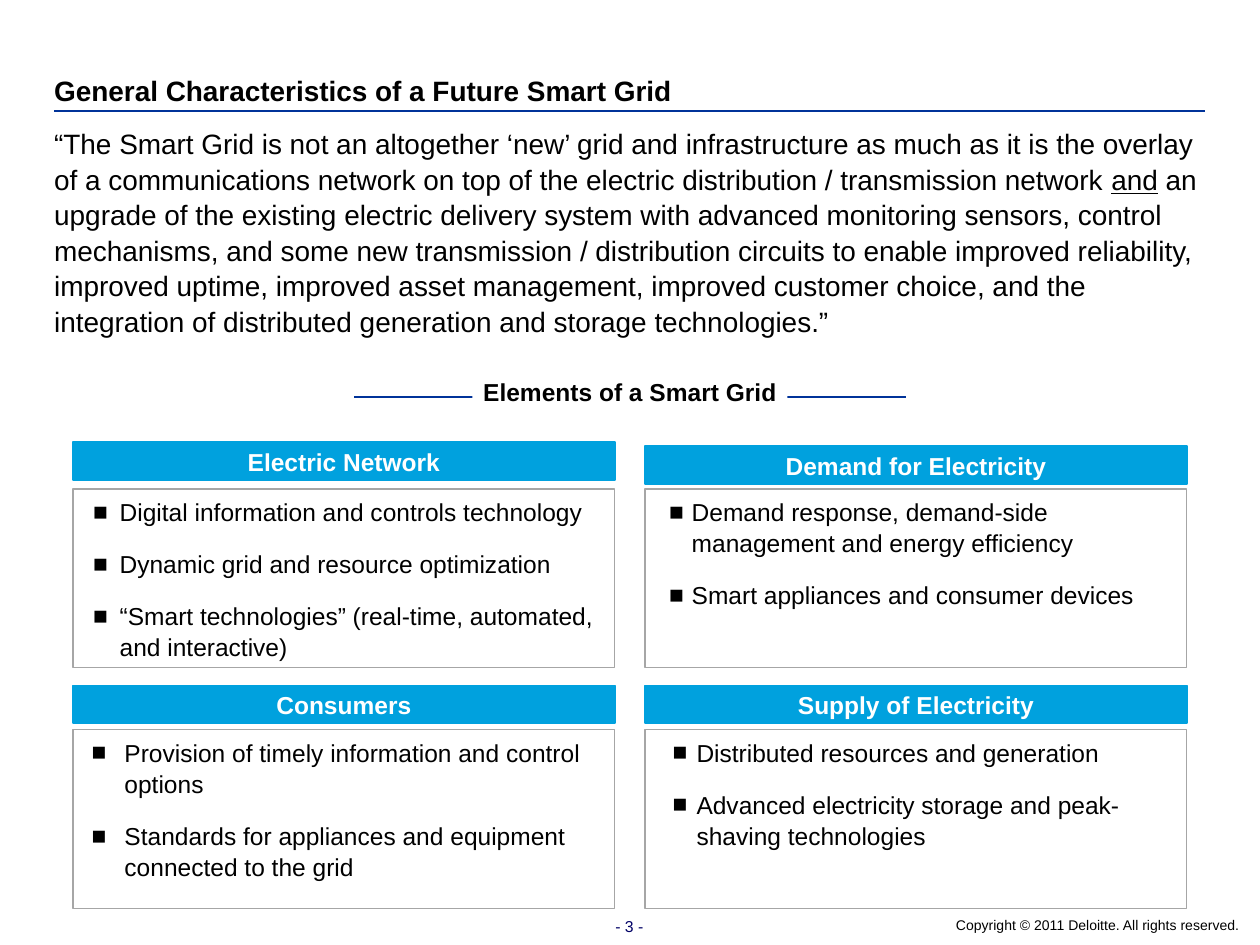
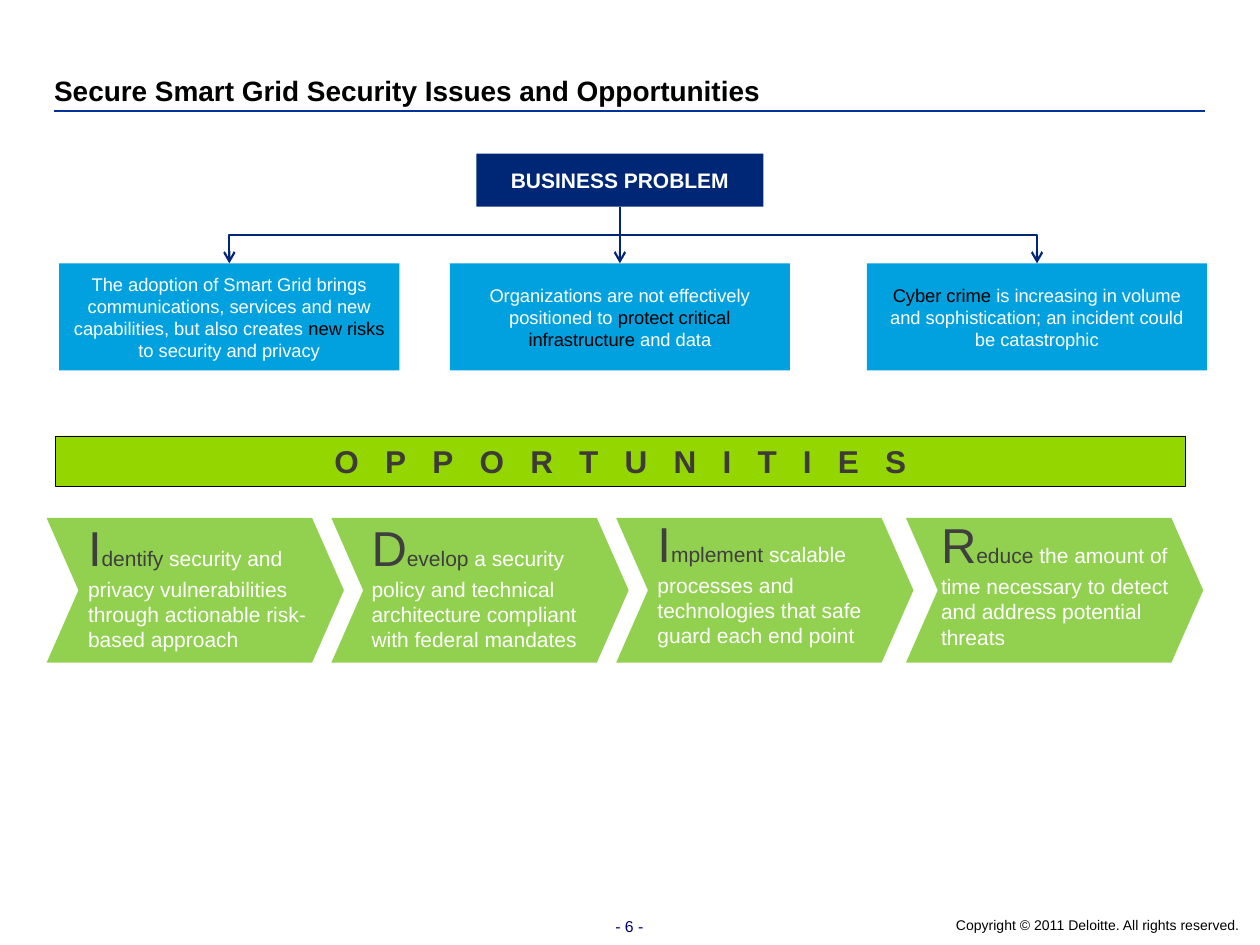
import pptx
import pptx.dml.color
import pptx.enum.dml
import pptx.enum.shapes
import pptx.enum.text
import pptx.oxml.ns
import pptx.util
import lxml.etree

Inches = pptx.util.Inches
Pt = pptx.util.Pt
SHAPE = pptx.enum.shapes.MSO_SHAPE
CONNECTOR = pptx.enum.shapes.MSO_CONNECTOR
ALIGN = pptx.enum.text.PP_ALIGN
ANCHOR = pptx.enum.text.MSO_ANCHOR
qn = pptx.oxml.ns.qn


class Theme:
    font = "Arial"
    black = "000000"
    white = "FFFFFF"
    rule = "003399"
    page = "000066"
    border = "A6A6A6"
    sky = "00A1DE"
    navy = "002776"
    lime = "94D600"
    leaf = "92D050"
    charcoal = "3F3F3F"
    banner_text = "3E3A38"
    heading_size = 16
    label_size = 14
    body_size = 12
    note_size = 10.5
    banner_size = 18
    initial_size = 28
    page_size = 9
    copyright_size = 8
    line_spacing = 1.06


def write_text(shape, paragraphs, size=Theme.body_size, color=Theme.black, bold=False,
               align=ALIGN.LEFT, anchor=ANCHOR.TOP, insets=(0.1, 0.05, 0.1, 0.05),
               spacing=1.0, gap=0, indent=None, bullet=None, tracking=None,
               fill=None, line=None, line_width=0.75, wrap=True):
    shape.shadow.inherit = False
    if fill:
        shape.fill.solid()
        shape.fill.fore_color.rgb = pptx.dml.color.RGBColor.from_string(fill)
    else:
        shape.fill.background()
    if line:
        shape.line.color.rgb = pptx.dml.color.RGBColor.from_string(line)
        shape.line.width = Pt(line_width)
    else:
        shape.line.fill.background()
    frame = shape.text_frame
    frame.auto_size = pptx.enum.text.MSO_AUTO_SIZE.NONE
    frame.word_wrap = wrap
    frame.vertical_anchor = anchor
    (frame.margin_left, frame.margin_top,
     frame.margin_right, frame.margin_bottom) = map(Inches, insets)
    for index, runs in enumerate(paragraphs):
        paragraph = frame.add_paragraph() if index else frame.paragraphs[0]
        if indent:
            properties = paragraph._p.get_or_add_pPr()
            properties.set("marL", str(Inches(indent[0])))
            properties.set("indent", str(Inches(indent[1])))
            if bullet:
                bullet_color = lxml.etree.SubElement(properties, qn("a:buClr"))
                lxml.etree.SubElement(bullet_color, qn("a:srgbClr"), val=Theme.black)
                lxml.etree.SubElement(properties, qn("a:buFont"), typeface=Theme.font)
                lxml.etree.SubElement(properties, qn("a:buChar"), char=bullet)
            else:
                lxml.etree.SubElement(properties, qn("a:buNone"))
        paragraph.alignment = align
        paragraph.line_spacing = spacing
        paragraph.space_before = Pt(gap if index else 0)
        for text, changes in [(runs, {})] if isinstance(runs, str) else runs:
            for number, piece in enumerate(text.split("\n")):
                if number:
                    paragraph.add_line_break()
                run = paragraph.add_run()
                run.text = piece
                run.font.name = Theme.font
                run.font.size = Pt(changes.get("size", size))
                run.font.bold = bold
                run.font.underline = changes.get("underline", False)
                run.font.color.rgb = pptx.dml.color.RGBColor.from_string(
                    changes.get("color", color))
                if tracking:
                    run._r.get_or_add_rPr().set("spc", str(tracking * 100))


def draw_line(slide, kind, start, end, color, width, arrow=False):
    connector = slide.shapes.add_connector(kind, *map(Inches, start + end))
    connector.line.color.rgb = pptx.dml.color.RGBColor.from_string(color)
    connector.line.width = Pt(width)
    properties = connector.element.spPr
    if arrow:
        lxml.etree.SubElement(properties.find(qn("a:ln")), qn("a:tailEnd"), type="arrow")
    lxml.etree.SubElement(properties, qn("a:effectLst"))
    return connector


presentation = pptx.Presentation()
presentation.slide_width = Inches(10)
presentation.slide_height = Inches(7.5)

slides = []
for layout_name, number, title in [
    ("Title and Content", 3, "General Characteristics of a Future Smart Grid"),
    ("Title Only", 6, "Secure Smart Grid Security Issues and Opportunities"),
]:
    slide = presentation.slides.add_slide(
        presentation.slide_layouts.get_by_name(layout_name))
    slides.append(slide)
    heading = slide.shapes.title
    heading.left, heading.top, heading.width, heading.height = map(
        Inches, (0.43, 0.57, 9.13, 0.28))
    write_text(heading, [title], size=Theme.heading_size, bold=True, anchor=ANCHOR.BOTTOM,
               insets=(0, 0, 0, 0), spacing=Theme.line_spacing)
    draw_line(slide, CONNECTOR.STRAIGHT, (0.43, 0.88), (9.56, 0.88), Theme.rule, 1.5)
    page_number = slide.shapes.add_textbox(*map(Inches, (4.61, 7.24, 0.77, 0.23)))
    write_text(page_number, [f"- {number} -"], size=Theme.page_size, color=Theme.page,
               align=ALIGN.CENTER, insets=(0.15, 0.05, 0.15, 0.05), spacing=0.9)
    copyright_line = slide.shapes.add_textbox(*map(Inches, (6.56, 7.28, 3.28, 0.13)))
    write_text(copyright_line, ["Copyright © 2011 Deloitte. All rights reserved."],
               size=Theme.copyright_size, align=ALIGN.RIGHT, anchor=ANCHOR.BOTTOM,
               insets=(0.05, 0, 0, 0), spacing=0.95)

characteristics, security = slides

quote = characteristics.placeholders[1]
quote.left, quote.top, quote.width, quote.height = map(Inches, (0.43, 0.99, 9.14, 1.84))
write_text(quote, [[
    ("“The Smart Grid is not an altogether ‘new’ grid and infrastructure as much as it is "
     "the overlay of a communications network on top of the electric distribution / "
     "transmission network ", {}),
    ("and", {"underline": True}),
    (" an upgrade of the existing electric delivery system with advanced monitoring "
     "sensors, control mechanisms, and some new transmission / distribution circuits to "
     "enable improved reliability, improved uptime, improved asset management, improved "
     "customer choice, and the integration of distributed generation and storage "
     "technologies.”", {}),
]], size=Theme.heading_size, insets=(0, 0, 0, 0), spacing=Theme.line_spacing, indent=(0, 0))

draw_line(characteristics, CONNECTOR.STRAIGHT, (2.81, 3.15), (7.19, 3.15), Theme.rule, 1)
elements_label = characteristics.shapes.add_shape(
    SHAPE.RECTANGLE, *map(Inches, (3.75, 3.01, 2.5, 0.22)))
write_text(elements_label, ["Elements of a Smart Grid"], size=Theme.label_size, bold=True,
           align=ALIGN.CENTER, anchor=ANCHOR.BOTTOM, insets=(0.08, 0, 0.08, 0),
           spacing=0.95, fill=Theme.white, wrap=False)

elements = [
    ("Electric Network", 0.58, 3.51, 3.88, (0, 0.05, 0, 0), (0.37, -0.21),
     ["Digital information and controls technology",
      "Dynamic grid and resource optimization",
      "“Smart technologies” (real-time, automated, and interactive)"]),
    ("Demand for Electricity", 5.12, 3.54, 3.88, (0, 0.05, 0, 0.1), (0.37, -0.18),
     ["Demand response, demand-side management and energy efficiency",
      "Smart appliances and consumer devices"]),
    ("Consumers", 0.58, 5.44, 5.79, (0.1, 0.05, 0.1, 0.1), (0.31, -0.26),
     ["Provision of timely information and control options",
      "Standards for appliances and equipment connected to the grid"]),
    ("Supply of Electricity", 5.12, 5.44, 5.79, (0.1, 0.05, 0.1, 0.1), (0.31, -0.19),
     ["Distributed resources and generation",
      "Advanced electricity storage and peak-shaving technologies"]),
]
for name, left, band_top, box_top, insets, indent, points in elements:
    box = characteristics.shapes.add_shape(
        SHAPE.RECTANGLE, *map(Inches, (left, box_top, 4.3, 1.42)))
    write_text(box, points, size=Theme.label_size, insets=insets, indent=indent, bullet="■",
               spacing=Theme.line_spacing, gap=12, line=Theme.border)
    band = characteristics.shapes.add_shape(
        SHAPE.RECTANGLE, *map(Inches, (left, band_top, 4.3, 0.3)))
    write_text(band, [name], size=Theme.label_size, color=Theme.white, bold=True,
               align=ALIGN.CENTER, anchor=ANCHOR.MIDDLE, insets=(0.08, 0.08, 0.08, 0.08),
               spacing=Theme.line_spacing, fill=Theme.sky, line=Theme.sky, line_width=1)

problem = security.shapes.add_shape(
    SHAPE.RECTANGLE, *map(Inches, (3.78, 1.22, 2.28, 0.42)))
write_text(problem, ["BUSINESS PROBLEM"], color=Theme.white, bold=True,
           align=ALIGN.CENTER, anchor=ANCHOR.MIDDLE, fill=Theme.navy)

highlight = {"color": Theme.black}
issues = [
    (0.47, [("The adoption of Smart Grid brings communications, services and new "
             "capabilities, but also creates", {}),
            (" new risks", highlight), (" to security and privacy", {})]),
    (3.57, [("Organizations are not effectively positioned to ", {}),
            ("protect critical infrastructure", highlight), (" and data", {})]),
    (6.88, [("Cyber crime ", highlight),
            ("is increasing in volume and sophistication; an incident could be "
             "catastrophic", {})]),
]
trunk, problem_bottom, issue_top, issue_width = 4.92, 1.64, 2.09, 2.7
drop = issue_top - problem_bottom
for left, runs in issues:
    issue = security.shapes.add_shape(
        SHAPE.RECTANGLE, *map(Inches, (left, issue_top, issue_width, 0.85)))
    write_text(issue, [runs], size=Theme.note_size, color=Theme.white,
               align=ALIGN.CENTER, anchor=ANCHOR.MIDDLE, fill=Theme.sky)
    center = left + issue_width / 2
    reach = round(center - trunk, 2)
    branch = draw_line(security, CONNECTOR.ELBOW if reach else CONNECTOR.STRAIGHT,
                       (trunk, problem_bottom), (center, issue_top),
                       Theme.navy, 1.25, arrow=True)
    branch.begin_connect(problem, 2)
    branch.end_connect(issue, 0)
    if reach:
        branch.left = Inches((trunk + center - drop) / 2)
        branch.top = Inches((problem_bottom + issue_top - abs(reach)) / 2)
        branch.width = Inches(drop)
        branch.height = Inches(abs(reach))
        branch.rotation = 270 if reach > 0 else 90
        branch.element.spPr.xfrm.flipH = reach > 0

banner = security.shapes.add_shape(
    SHAPE.RECTANGLE, *map(Inches, (0.44, 3.46, 8.97, 0.4)))
write_text(banner, ["OPPORTUNITIES"], size=Theme.banner_size, color=Theme.banner_text,
           bold=True, align=ALIGN.CENTER, anchor=ANCHOR.MIDDLE, tracking=15,
           fill=Theme.lime, line=Theme.black, line_width=0.25)

opportunities = [
    (0.37, (0.6, 4.05, 2.35, 1.18), "I", "dentify",
     " security and \nprivacy vulnerabilities through actionable risk-based approach"),
    (2.63, (2.85, 4.05, 2.35, 1.18), "D", "evelop",
     " a security \npolicy and technical architecture compliant \nwith federal mandates"),
    (4.89, (5.12, 4.02, 2.54, 1.18), "I", "mplement",
     " scalable \nprocesses and \ntechnologies that safe \nguard each end point"),
    (7.19, (7.37, 4.03, 2.32, 1.18), "R", "educe ",
     "the amount of time necessary to detect and address potential threats"),
]
for left, text_area, initial, verb, explanation in opportunities:
    chevron = security.shapes.add_shape(
        SHAPE.CHEVRON, *map(Inches, (left, 4.11, 2.36, 1.15)))
    chevron.adjustments[0] = 0.22
    write_text(chevron, [], fill=Theme.leaf)
    caption = security.shapes.add_textbox(*map(Inches, text_area))
    write_text(caption, [[(initial, {"size": Theme.initial_size}), (verb, {}),
                          (explanation, {"color": Theme.white})]],
               color=Theme.charcoal, anchor=ANCHOR.MIDDLE)

presentation.save("out.pptx")
